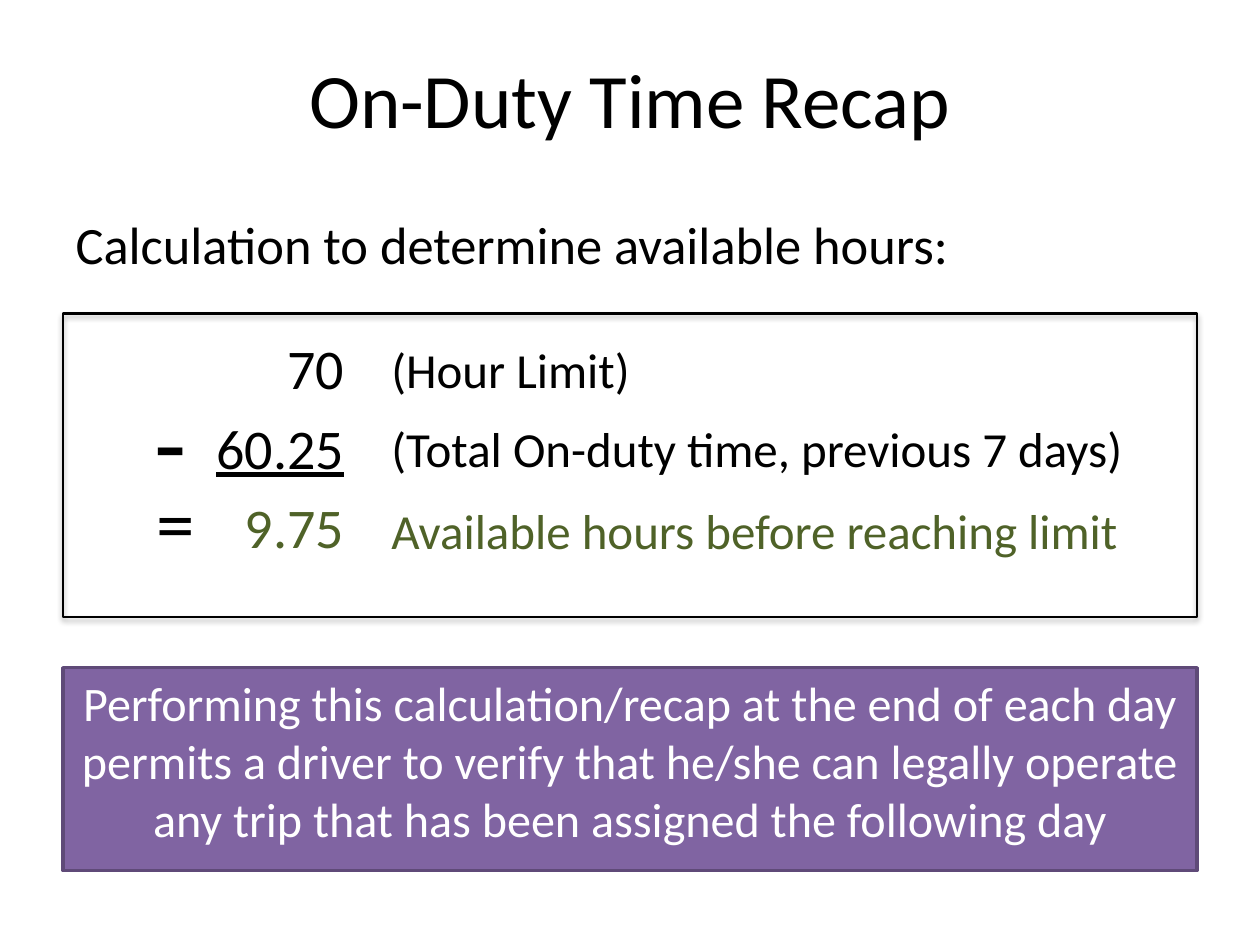
"""Build the On-Duty Time Recap slide."""
from lxml.etree import fromstring
from pptx import Presentation
from pptx.dml.color import RGBColor
from pptx.enum.shapes import MSO_SHAPE as Shape
from pptx.enum.text import MSO_ANCHOR as Anchor, PP_ALIGN as Align
from pptx.util import Cm, Pt

BLACK = RGBColor(0x00, 0x00, 0x00)
WHITE = RGBColor(0xFF, 0xFF, 0xFF)
GREEN = RGBColor(0x4F, 0x62, 0x28)
PURPLE = RGBColor(0x80, 0x64, 0xA2)
DARK_PURPLE = RGBColor(0x5F, 0x4A, 0x78)
FRAME_SHADOW = (
    '<a:effectLst xmlns:a="http://schemas.openxmlformats.org/drawingml/2006/main">'
    '<a:outerShdw blurRad="39370" dist="22860" dir="5400000" rotWithShape="0">'
    '<a:srgbClr val="000000"><a:alpha val="35000"/></a:srgbClr>'
    '</a:outerShdw></a:effectLst>'
)


def write(para, text, size, color=BLACK, align=Align.LEFT, underline=None,
          before=0, after=0, spacing=1.0):
    para.alignment = align
    para.space_before, para.space_after = Pt(before), Pt(after)
    para.line_spacing = spacing
    span = para.add_run()
    span.text = text
    span.font.name = "Calibri"
    span.font.size = Pt(size)
    span.font.color.rgb = color
    span.font.underline = underline


def place(shape, left, top, width, height):
    shape.left, shape.top = Cm(left), Cm(top)
    shape.width, shape.height = Cm(width), Cm(height)


deck = Presentation()
deck.slide_width, deck.slide_height = Cm(25.4), Cm(19.05)
slide = deck.slides.add_slide(deck.slide_layouts[1])
shapes = slide.shapes

title = shapes.title
place(title, 1.27, 0.38, 22.86, 3.18)
write(title.text_frame.paragraphs[0], "On-Duty Time Recap", 44, align=Align.CENTER)

body = slide.placeholders[1]
place(body, 1.27, 4.14, 22.86, 2.51)
intro = body.text_frame.paragraphs[0]
write(intro, "Calculation to determine available hours:", 30, after=12)
properties = intro._p.get_or_add_pPr()
properties.set("marL", "0")
properties.set("indent", "0")
properties.append(properties.makeelement(
    "{http://schemas.openxmlformats.org/drawingml/2006/main}buNone", {}))

banner = shapes.add_shape(Shape.RECTANGLE, Cm(1.27), Cm(13.46), Cm(22.86), Cm(4.09))
banner.shadow.inherit = False
banner.fill.solid()
banner.fill.fore_color.rgb = PURPLE
banner.line.color.rgb = DARK_PURPLE
banner.line.width = Pt(2)
banner.text_frame.word_wrap = True
banner.text_frame.vertical_anchor = Anchor.TOP
write(banner.text_frame.paragraphs[0],
      "Performing this calculation/recap at the end of each day permits a driver "
      "to verify that he/she can legally operate any trip that has been assigned "
      "the following day", 27.5, color=WHITE, align=Align.CENTER)

frame = shapes.add_shape(Shape.RECTANGLE, Cm(1.27), Cm(6.32), Cm(22.86), Cm(6.12))
frame.fill.background()
frame.line.color.rgb = BLACK
frame.line.width = Pt(1.25)
frame._element.spPr.append(fromstring(FRAME_SHADOW))

numbers = shapes.add_textbox(Cm(2.31), Cm(6.6), Cm(4.88), Cm(4.88)).text_frame
numbers.word_wrap = True
rows = [
    ("70", "(Hour Limit)", BLACK, None, 6.48),
    ("60.25", "(Total On-duty time, previous 7 days)", BLACK, True, 8.08),
    ("9.75", "Available hours before reaching limit", GREEN, None, 9.73),
]
for index, (hours, label, color, underline, top) in enumerate(rows):
    para = numbers.add_paragraph() if index else numbers.paragraphs[0]
    write(para, hours, 32, color=color, align=Align.RIGHT, underline=underline,
          before=7 if index else 0)
    box = shapes.add_textbox(Cm(7.64), Cm(top), Cm(16.4), Cm(1.83))
    box.text_frame.word_wrap = True
    write(box.text_frame.paragraphs[0], label, 28, color=color, spacing=1.2)

for sign, size, left, top, height in [("-", 60, 2.87, 7.47, 2.82),
                                      ("=", 44, 2.9, 9.45, 2.13)]:
    box = shapes.add_textbox(Cm(left), Cm(top), Cm(1.14), Cm(height))
    box.text_frame.word_wrap = True
    write(box.text_frame.paragraphs[0], sign, size)

deck.save("out.pptx")
